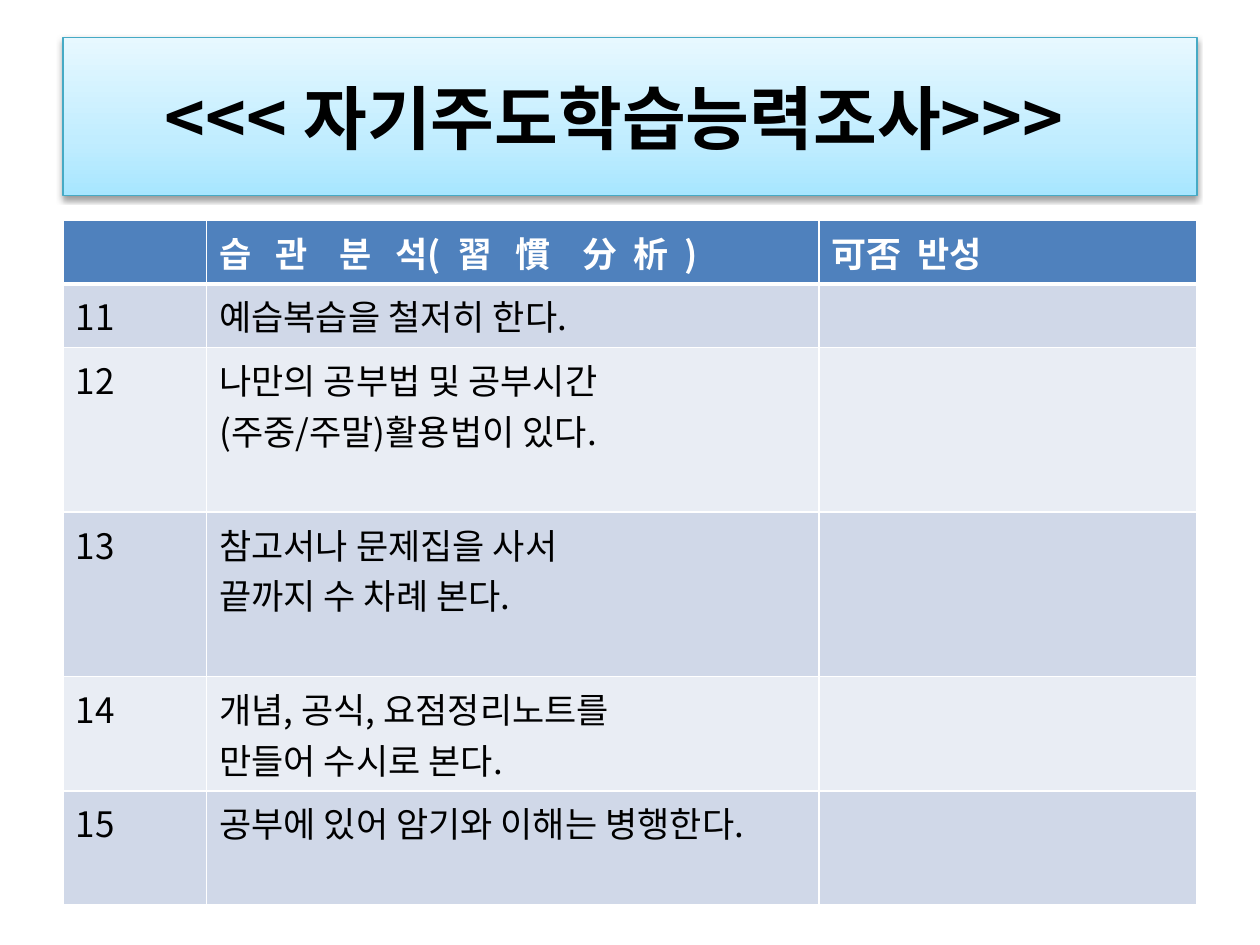
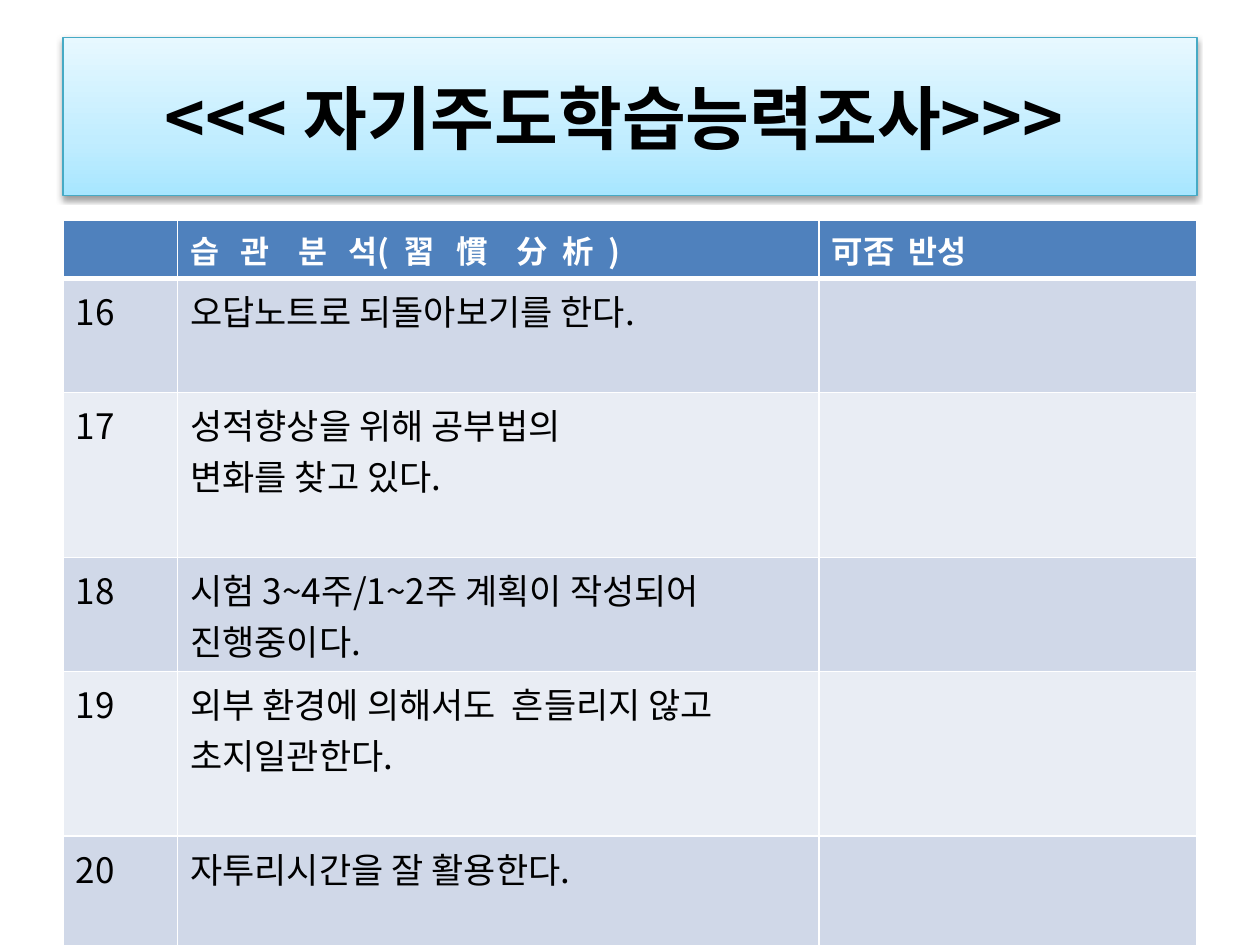
from copy import deepcopy

from pptx import Presentation
from pptx.dml.color import RGBColor
from pptx.enum.shapes import MSO_SHAPE
from pptx.enum.text import MSO_ANCHOR, PP_ALIGN
from pptx.oxml import parse_xml
from pptx.oxml.ns import nsdecls, qn
from pptx.util import Inches, Pt

RECTANGLE = MSO_SHAPE.RECTANGLE
MIDDLE = MSO_ANCHOR.MIDDLE
CENTER = PP_ALIGN.CENTER

FONT = "Noto Sans CJK KR"
BLACK, WHITE = "000000", "FFFFFF"
HEADER_FILL = "4F81BD"
ROW_FILLS = ("D0D8E8", "E9EDF4")
BANNER_LINE = "46AAC5"
BANNER_STOPS = ((0, "A7E6FF"), (0.35, "C1EDFF"), (1, "E7F8FF"))
LEFT, WIDTH = 0.5, 9
BODY_SIZE = 20
LINE_RATIO = 1.448
CELL_PADDING = 0.1
THIN, THICK = 1, 3

TITLE = "<<< 자기주도학습능력조사>>>  "
HEADINGS = ("", "습   관    분   석(  習   慣    分  析  )", "可否  반성")

SURVEY_PAGES = (
    {
        "columns": (1.14, 4.86, 3),
        "heading_size": 20,
        "first_number": 11,
        "habits": (
            ("예습복습을 철저히 한다.", 1),
            ("나만의 공부법 및 공부시간\n(주중/주말)활용법이 있다.", 3),
            ("참고서나 문제집을 사서\n끝까지 수 차례 본다.", 3),
            ("개념, 공식, 요점정리노트를\n만들어 수시로 본다.", 2),
            ("공부에 있어 암기와 이해는 병행한다.", 2),
        ),
    },
    {
        "columns": (0.91, 5.09, 3),
        "heading_size": 18,
        "first_number": 16,
        "habits": (
            ("오답노트로 되돌아보기를 한다.", 2),
            ("성적향상을 위해 공부법의\n변화를 찾고 있다.", 3),
            ("시험 3~4주/1~2주 계획이 작성되어\n진행중이다.", 2),
            ("외부 환경에 의해서도  흔들리지 않고\n초지일관한다.", 3),
            ("자투리시간을 잘 활용한다.", 2),
        ),
    },
)


def color(value):
    """Turn a hex string into a colour."""
    return RGBColor.from_string(value)


def row_height(lines, size):
    """Return the height of a row that holds the given lines of text."""
    return Inches(CELL_PADDING + lines * size * LINE_RATIO / 72)


class SurveyDeck:
    """Hold the survey style and the current slide."""

    def __init__(self):
        """Start an empty deck."""
        self.deck = Presentation()
        self.deck.slide_width = Inches(10)
        self.deck.slide_height = Inches(7.5)
        self.page = None

    def add_page(self):
        """Add a blank slide and make it current."""
        self.page = self.deck.slides.add_slide(self.deck.slide_layouts[6])

    def style_text(self, frame, size, ink, bold):
        """Give every paragraph of a frame the same font."""
        for paragraph in frame.paragraphs:
            font = paragraph.font
            font.name, font.size, font.bold = FONT, Pt(size), bold
            font.color.rgb = color(ink)
            latin = paragraph._p.pPr.find(qn("a:defRPr")).find(qn("a:latin"))
            latin.addnext(parse_xml(f'<a:ea {nsdecls("a")} typeface="{FONT}"/>'))

    def add_banner(self, text):
        """Draw the title band with its gradient and shadow."""
        box = self.page.shapes.add_shape(
            RECTANGLE, Inches(LEFT), Inches(0.3), Inches(WIDTH), Inches(1.25))
        box.fill.gradient()
        box.fill.gradient_angle = 90
        stops = box._element.spPr.find(".//" + qn("a:gsLst"))
        stops.insert(1, deepcopy(stops[0]))
        for stop, (position, tint) in zip(box.fill.gradient_stops, BANNER_STOPS):
            stop.position = position
            stop.color.rgb = color(tint)
        box.line.color.rgb = color(BANNER_LINE)
        box.line.width = Pt(0.75)
        box.shadow.inherit = False
        box._element.spPr.find(qn("a:effectLst")).append(parse_xml(
            f'<a:outerShdw {nsdecls("a")} blurRad="{Pt(3.1)}" dist="{Pt(1.6)}" '
            'dir="5400000" rotWithShape="0"><a:srgbClr val="000000">'
            '<a:alpha val="38000"/></a:srgbClr></a:outerShdw>'))
        frame = box.text_frame
        frame.word_wrap = True
        frame.vertical_anchor = MIDDLE
        frame.text = text
        frame.paragraphs[0].alignment = CENTER
        self.style_text(frame, 39.6, BLACK, True)

    def style_cell(self, cell, fill, top, bottom):
        """Set the white borders and the fill of a cell."""
        borders = {"lnL": THIN, "lnR": THIN, "lnT": top, "lnB": bottom}
        properties = cell._tc.get_or_add_tcPr()
        for side, width in borders.items():
            properties.append(parse_xml(
                f'<a:{side} {nsdecls("a")} w="{Pt(width)}"><a:solidFill>'
                f'<a:srgbClr val="{WHITE}"/></a:solidFill></a:{side}>'))
        cell.fill.solid()
        cell.fill.fore_color.rgb = color(fill)

    def add_survey(self, columns, heading_size, first_number, habits):
        """Draw the table of numbered study habits."""
        rows = [(HEADINGS, row_height(1, heading_size))]
        for number, (habit, lines) in enumerate(habits, first_number):
            rows.append(((str(number), habit, ""), row_height(lines, BODY_SIZE)))
        table = self.page.shapes.add_table(
            len(rows), len(columns), Inches(LEFT), Inches(1.75),
            Inches(WIDTH), sum(height for _, height in rows)).table
        for column, width in zip(table.columns, columns):
            column.width = Inches(width)
        for index, (texts, height) in enumerate(rows):
            table.rows[index].height = height
            heading = index == 0
            fill = HEADER_FILL if heading else ROW_FILLS[(index - 1) % 2]
            size = heading_size if heading else BODY_SIZE
            top = THICK if index == 1 else THIN
            bottom = THICK if heading else THIN
            for cell, text in zip(table.rows[index].cells, texts):
                cell.text = text
                self.style_cell(cell, fill, top, bottom)
                self.style_text(cell.text_frame, size, WHITE if heading else BLACK, heading)


def main():
    """Build the survey slides and save them."""
    survey = SurveyDeck()
    for content in SURVEY_PAGES:
        survey.add_page()
        survey.add_banner(TITLE)
        survey.add_survey(**content)
    survey.deck.save("out.pptx")


if __name__ == "__main__":
    main()
